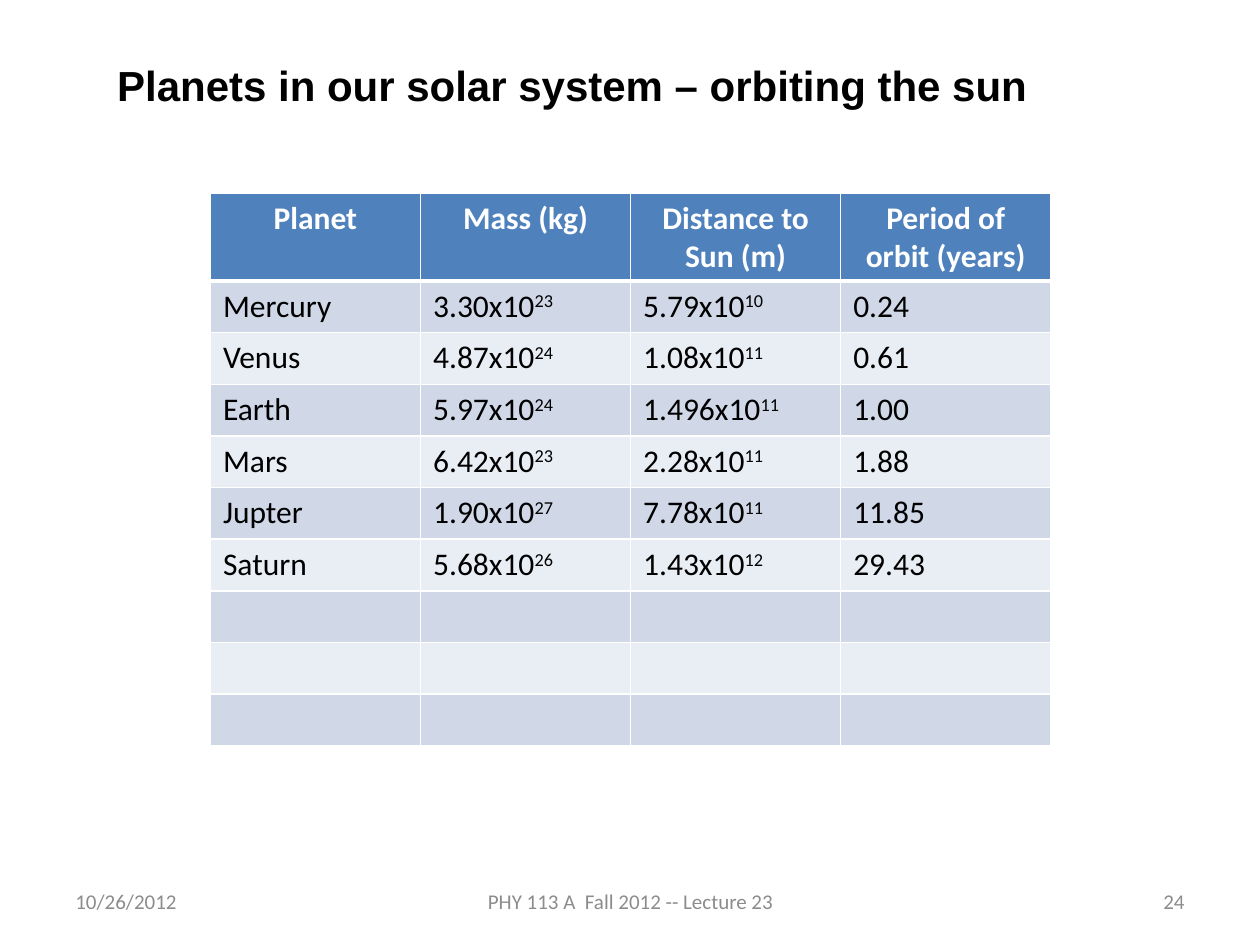
import pptx
import pptx.util
import pptx.dml.color
import pptx.enum.text
import pptx.oxml.ns
import lxml.etree

Inches, Pt = pptx.util.Inches, pptx.util.Pt
ALIGN = pptx.enum.text.PP_ALIGN
ANCHOR = pptx.enum.text.MSO_ANCHOR

COLORS = {
    "text": "000000",
    "footer": "8C8C8C",
    "header": "4F81BD",
    "header_text": "FFFFFF",
    "border": "FFFFFF",
    "odd_row": "D0D8E8",
    "even_row": "E9EDF4",
}

HEADINGS = ["Planet", "Mass (kg)", "Distance to Sun (m)", "Period of orbit (years)"]
# A caret marks the start of an exponent
PLANETS = [
    ["Mercury", "3.30x10^23", "5.79x10^10", "0.24"],
    ["Venus", "4.87x10^24", "1.08x10^11", "0.61"],
    ["Earth", "5.97x10^24", "1.496x10^11", "1.00"],
    ["Mars", "6.42x10^23", "2.28x10^11", "1.88"],
    ["Jupter", "1.90x10^27", "7.78x10^11", "11.85"],
    ["Saturn", "5.68x10^26", "1.43x10^12", "29.43"],
]
EMPTY_ROWS = 3


class SlideBuilder:
    def __init__(self, slide):
        self.slide = slide
        self.body_font = "Calibri"
        self.title_font = "Arial"

    def color(self, key):
        return pptx.dml.color.RGBColor.from_string(COLORS[key])

    def style(self, paragraph, font, size, color, bold=False, align=ALIGN.LEFT):
        paragraph.alignment = align
        paragraph.font.name = font
        paragraph.font.size = Pt(size)
        paragraph.font.bold = bold
        paragraph.font.color.rgb = self.color(color)

    def title(self, text, left, top, width, height):
        title = self.slide.shapes.title
        title.left, title.top = Inches(left), Inches(top)
        title.width, title.height = Inches(width), Inches(height)
        frame = title.text_frame
        frame.text = text
        frame.word_wrap = True
        frame.auto_size = pptx.enum.text.MSO_AUTO_SIZE.SHAPE_TO_FIT_TEXT
        frame.vertical_anchor = ANCHOR.TOP
        self.style(frame.paragraphs[0], self.title_font, 24, "text", bold=True)

    def footer(self, text, left, width, align):
        box = self.slide.shapes.add_textbox(
            Inches(left), Inches(6.95), Inches(width), Inches(0.4))
        frame = box.text_frame
        frame.word_wrap = True
        frame.vertical_anchor = ANCHOR.MIDDLE
        frame.text = text
        self.style(frame.paragraphs[0], self.body_font, 12, "footer", align=align)

    def borders(self, cell, top, bottom):
        properties = cell._tc.get_or_add_tcPr()
        qn = pptx.oxml.ns.qn
        for side, width in (("L", 1), ("R", 1), ("T", top), ("B", bottom)):
            line = lxml.etree.SubElement(properties, qn(f"a:ln{side}"), w=str(Pt(width)))
            fill = lxml.etree.SubElement(line, qn("a:solidFill"))
            lxml.etree.SubElement(fill, qn("a:srgbClr"), val=COLORS["border"])

    def cell(self, cell, text, row):
        is_header = row == 0
        self.borders(cell, top=3 if row == 1 else 1, bottom=3 if is_header else 1)
        band = "header" if is_header else "odd_row" if row % 2 else "even_row"
        cell.fill.solid()
        cell.fill.fore_color.rgb = self.color(band)

        paragraph = cell.text_frame.paragraphs[0]
        base, _, exponent = text.partition("^")
        if base:
            paragraph.add_run().text = base
        if exponent:
            power = paragraph.add_run()
            power.text = exponent
            power._r.get_or_add_rPr().set("baseline", "30000")
        self.style(paragraph, self.body_font, 18,
                   "header_text" if is_header else "text", bold=is_header,
                   align=ALIGN.CENTER if is_header else ALIGN.LEFT)

    def table(self, rows, left, top, width, row_height):
        table = self.slide.shapes.add_table(
            len(rows), len(rows[0]), Inches(left), Inches(top),
            Inches(width), Inches(row_height * len(rows))).table
        for row, texts in enumerate(rows):
            for column, text in enumerate(texts):
                self.cell(table.cell(row, column), text, row)


def main():
    deck = pptx.Presentation()
    deck.slide_width, deck.slide_height = Inches(10), Inches(7.5)
    builder = SlideBuilder(deck.slides.add_slide(deck.slide_layouts[5]))

    # Footer line
    builder.footer("10/26/2012", 0.5, 2.33, ALIGN.LEFT)
    builder.footer("PHY 113 A  Fall 2012 -- Lecture 23", 3.42, 3.17, ALIGN.CENTER)
    builder.footer("24", 7.17, 2.33, ALIGN.RIGHT)

    # Title
    builder.title("Planets in our solar system – orbiting the sun", 0.83, 0.42, 8.42, 0.5)

    # Planet data, with blank rows left to fill in
    blanks = [[""] * len(HEADINGS)] * EMPTY_ROWS
    builder.table([HEADINGS] + PLANETS + blanks, 1.67, 1.53, 6.67, 0.41)

    deck.save("out.pptx")


if __name__ == "__main__":
    main()
